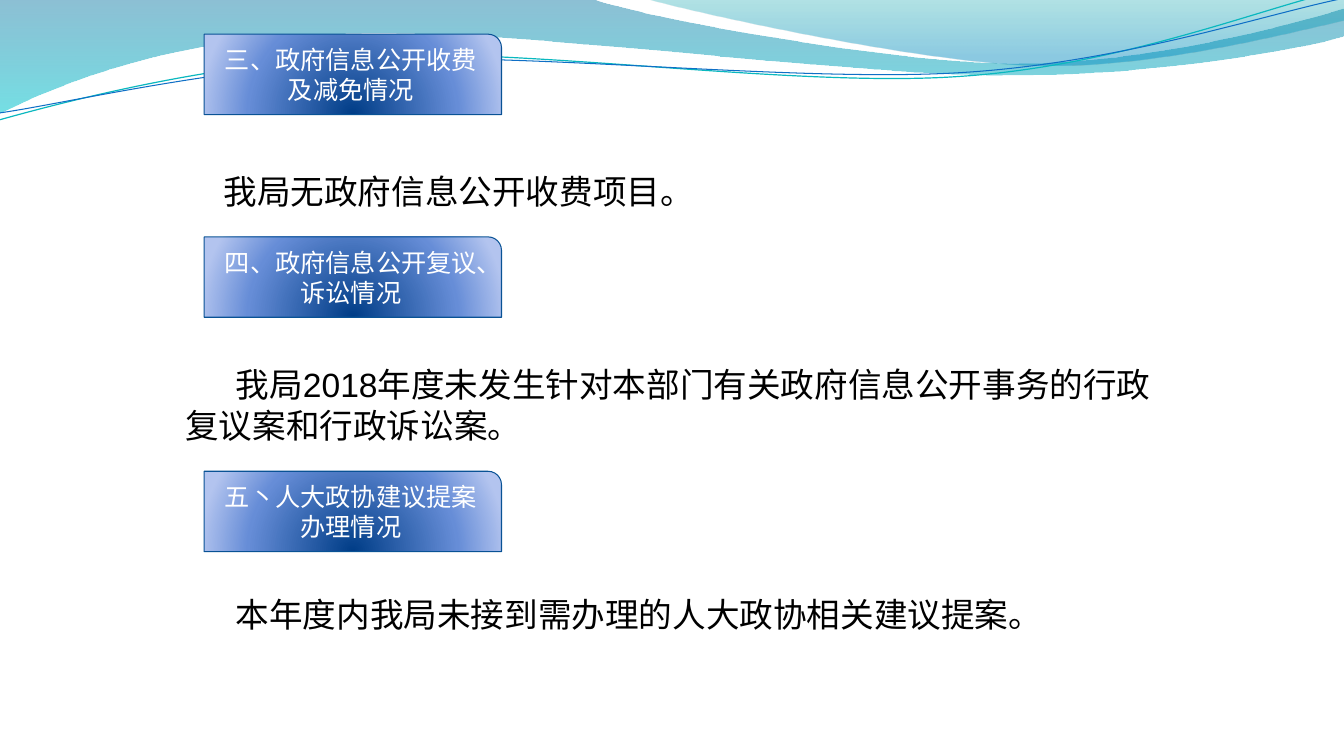
from lxml.etree import SubElement
from pptx import Presentation
from pptx.dml.color import RGBColor
from pptx.enum.shapes import MSO_SHAPE
from pptx.enum.text import MSO_ANCHOR, PP_ALIGN
from pptx.oxml.ns import qn
from pptx.util import Pt

WHITE = RGBColor(0xFF, 0xFF, 0xFF)
BLACK = RGBColor(0x00, 0x00, 0x00)
DEEP_BLUE = RGBColor(0x00, 0x74, 0xA1)
AQUA = RGBColor(0x00, 0xC6, 0xCF)
TEAL = RGBColor(0x00, 0xA1, 0xA9)
SKY = RGBColor(0x00, 0x8B, 0xBF)
TEAL_LINE = RGBColor(0x0A, 0xB8, 0xBF)
BLUE_LINE = RGBColor(0x0F, 0x6F, 0xC6)
TAG_DARK = RGBColor(0x00, 0x3D, 0x87)
TAG_MID = RGBColor(0x66, 0x8D, 0xD7)
TAG_LIGHT = RGBColor(0xB3, 0xC4, 0xEF)
TAG_EDGE = RGBColor(0x09, 0x52, 0x95)


def add_text(para, text, *, size, color, font="Cambria"):
    span = para.add_run()
    span.text = text
    span.font.size = Pt(size)
    span.font.name = font
    span.font.color.rgb = color


def set_gradient(shape, stops, radial=False):
    """Each stop is (position %, colour, opacity %)."""
    shape.fill.gradient()
    gradient = shape.element.spPr.find(qn("a:gradFill"))
    for child in list(gradient):
        gradient.remove(child)
    stop_list = SubElement(gradient, qn("a:gsLst"))
    for position, color, opacity in stops:
        stop = SubElement(stop_list, qn("a:gs"), pos=str(position * 1000))
        tint = SubElement(stop, qn("a:srgbClr"), val=str(color))
        if opacity < 100:
            SubElement(tint, qn("a:alpha"), val=str(opacity * 1000))
    if radial:
        circle = SubElement(gradient, qn("a:path"), path="circle")
        SubElement(circle, qn("a:fillToRect"),
                   l="50000", t="130000", r="50000", b="-30000")
    else:
        SubElement(gradient, qn("a:lin"), ang="5400000", scaled="1")


deck = Presentation()
deck.slide_width, deck.slide_height = Pt(960), Pt(540)
page = deck.slides.add_slide(deck.slide_layouts[6])
page.background.fill.solid()
page.background.fill.fore_color.rgb = WHITE

# Waves along the top: two numbers are a straight step, six a Bézier curve
waves = [
    dict(start=(0, 0), steps=[
        (422.6, -0.7),
        (456.5, 12.2, 637.2, 45.4, 727.9, 45.4),
        (819.4, 45.4, 920.2, 18.7, 959.8, 6.5),
        (961.2, 25.9),
        (943.9, 31.7, 835.2, 54.7, 715.7, 54),
        (596.9, 54, 366.5, 20.2, 247, 24.5),
        (123.8, 25.9, 43.9, 59.8, -0.7, 81.4)],
        stops=[(0, DEEP_BLUE, 45), (100, AQUA, 55)]),
    dict(start=(460.1, -0.7), steps=[
        (488.9, 7.9, 654.5, 44.6, 738, 46.8),
        (821.5, 49.7, 923, 23, 959.8, 15.1),
        (959.8, 0)],
        stops=[(0, TEAL, 30), (80, SKY, 45)]),
    dict(start=(-0.7, 85.7), steps=[
        (46.1, 72.7, 151.9, 44.6, 265.7, 39.6),
        (379.4, 34.6, 568.8, 62.6, 684, 54.7),
        (799.2, 47.5, 901.4, 5.8, 958.3, -7.2)],
        line=(TEAL_LINE, 0.85)),
    dict(start=(0, 80.6), steps=[
        (45.4, 74.2, 157, 47.5, 272.2, 42.5),
        (386.6, 38.2, 573.1, 59, 687.6, 51.8),
        (802.8, 44.6, 903.6, 10.1, 960.5, -1.4)],
        line=(BLUE_LINE, 0.75)),
]
for wave in waves:
    x, y = wave["start"]
    outline = page.shapes.build_freeform(Pt(x), Pt(y), scale=1.0)
    for step in wave["steps"]:
        corners = [(Pt(x), Pt(y)) for x, y in zip(step[::2], step[1::2])]
        outline.add_line_segments(corners, close=False)
    shape = outline.convert_to_shape()
    shape.shadow.inherit = False

    # Join each run of three points into one curve
    track = next(shape.element.iter(qn("a:path")))
    segments = iter(track.findall(qn("a:lnTo")))
    for step in wave["steps"]:
        segment = next(segments)
        if len(step) == 6:
            curve = SubElement(track, qn("a:cubicBezTo"))
            for part in (segment, next(segments), next(segments)):
                curve.append(part[0])
                track.remove(part)
        else:
            track.append(segment)

    if "stops" in wave:
        SubElement(track, qn("a:close"))
        set_gradient(shape, wave["stops"])
        shape.line.fill.background()
    else:
        color, weight = wave["line"]
        shape.fill.background()
        shape.line.color.rgb = color
        shape.line.width = Pt(weight)

# Sections: heading tag, then body text as (text, font) spans
sections = [
    ("三、政府信息公开收费及减免情况", 24.4, (116.6, 118.4, 65.5),
     [("我局无政府信息公开收费项目。", "Cambria")]),
    ("四、政府信息公开复议、诉讼情况", 169.2, (125.3, 256.6, 94.3),
     [("我局", "Cambria"), ("2018", "Arial"),
      ("年度未发生针对本部门有关政府信息公开事务的行政复议案和行政诉讼案。", "Cambria")]),
    ("五丶人大政协建议提案办理情况", 336.6, (125.3, 420.5, 36),
     [("本年度内我局未接到需办理的人大政协相关建议提案。", "Cambria")]),
]
for heading, tag_top, (left, top, height), spans in sections:
    tag = page.shapes.add_shape(MSO_SHAPE.ROUND_1_RECTANGLE,
                                Pt(145.8), Pt(tag_top), Pt(212.4), Pt(57.4))
    set_gradient(tag, [(0, TAG_DARK, 100), (68, TAG_MID, 100),
                       (100, TAG_LIGHT, 100)], radial=True)
    tag.line.color.rgb = TAG_EDGE
    tag.line.width = Pt(0.75)
    tag.shadow.inherit = False
    tag.text_frame.word_wrap = True
    tag.text_frame.vertical_anchor = MSO_ANCHOR.MIDDLE
    para = tag.text_frame.paragraphs[0]
    para.alignment = PP_ALIGN.CENTER
    add_text(para, heading, size=18, color=WHITE)

    box = page.shapes.add_textbox(Pt(left), Pt(top), Pt(709.2), Pt(height))
    box.text_frame.word_wrap = True
    para = box.text_frame.paragraphs[0]
    properties = para._p.get_or_add_pPr()
    properties.set("marL", "0")
    properties.set("indent", str(Pt(36)))
    for text, font in spans:
        add_text(para, text, size=24, color=BLACK, font=font)

deck.save("out.pptx")
